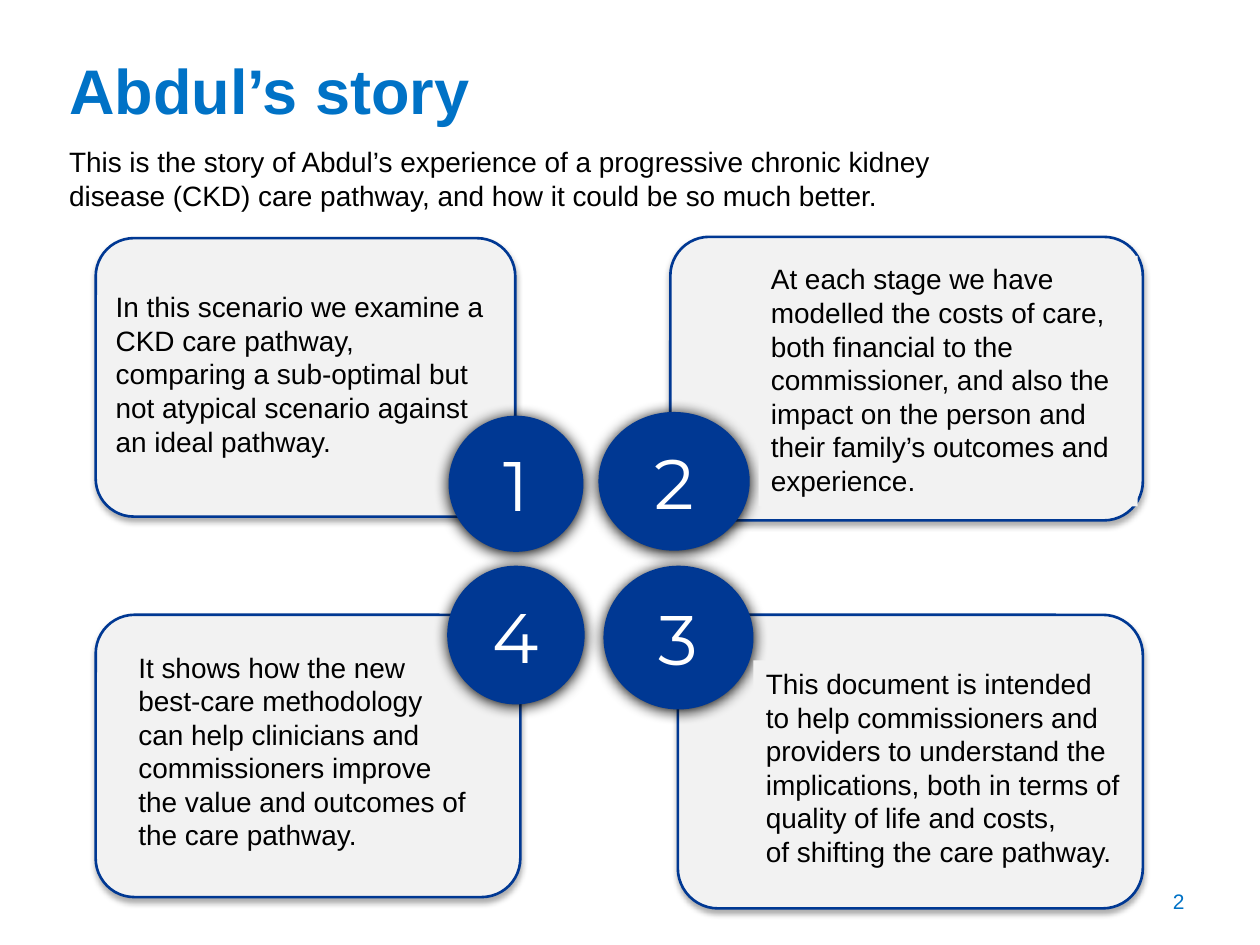
import pptx
import pptx.dml.color
import pptx.enum.shapes
import pptx.enum.text
import pptx.oxml
import pptx.oxml.ns
import pptx.util

RGB = pptx.dml.color.RGBColor
SHAPE = pptx.enum.shapes.MSO_SHAPE
ALIGN = pptx.enum.text.PP_ALIGN
ANCHOR = pptx.enum.text.MSO_ANCHOR
Inches, Pt = pptx.util.Inches, pptx.util.Pt

BLUE = RGB(0x00, 0x72, 0xC6)
NAVY = RGB(0x00, 0x38, 0x93)
PALE = RGB(0xF2, 0xF2, 0xF2)
BLACK = RGB(0, 0, 0)
WHITE = RGB(0xFF, 0xFF, 0xFF)

SLIDE_SIZE = (10, 7.5)
MARGIN = 0.45
CARD_LEFT, CARD_RIGHT = 0.76, 9.07
TOP_ROW, BOTTOM_ROW = 1.88, 4.88
CORNER = 0.137

TITLE = "Abdul’s story"
INTRO = ("This is the story of Abdul’s experience of a progressive chronic kidney "
         "disease (CKD) care pathway, and how it could be so much better.")
PAGE = "2"

BODY_FONT = {"name": "Arial", "size": Pt(16), "color": BLACK}
TITLE_FONT = {"name": "Arial", "size": Pt(36), "color": BLUE, "bold": True}
NUMBER_FONT = {"name": "Montserrat", "size": Pt(40), "color": WHITE}
PAGE_FONT = {"name": "Arial", "size": Pt(12), "color": BLUE}

# Shadows: blur, distance (points), opacity (percent)
CARD_SHADOW = (3.5, 2.2, 32)
BADGE_SHADOW = (8.5, 1, 100)

# A card hangs from the outer edge of its column; boxes are left, top, width, height
CARDS = [
    {"number": "1", "row": TOP_ROW + 0.01, "size": (3.33, 2.21), "side": "left",
     "badge": (3.57, 3.31, 1.05, 1.06), "story": (0.82, 2.25, 3.16, 1.45),
     "fill": PALE, "badge_on_top": True,
     "text": "In this scenario we examine a CKD care pathway, comparing a sub-optimal "
             "but not atypical scenario against an ideal pathway."},
    {"number": "4", "row": BOTTOM_ROW, "size": (3.37, 2.24), "side": "left",
     "badge": (3.56, 4.5, 1.07, 1.08), "story": (1, 5.11, 2.83, 1.72),
     "fill": None, "badge_on_top": False,
     "text": "It shows how the new best-care methodology can help clinicians and "
             "commissioners improve the value and outcomes of the care pathway."},
    {"number": "3", "row": BOTTOM_ROW, "size": (3.69, 2.33), "side": "right",
     "badge": (4.8, 4.5, 1.17, 1.12), "story": (5.98, 5.24, 3.01, 1.72),
     "fill": PALE, "badge_on_top": False,
     "text": "This document is intended to help commissioners and providers to "
             "understand the implications, both in terms of quality of life and "
             "costs, \nof shifting the care pathway."},
    {"number": "2", "row": TOP_ROW, "size": (3.75, 2.25), "side": "right",
     "badge": (4.76, 3.28, 1.18, 1.08), "story": (6.02, 2.03, 3.01, 1.99),
     "fill": PALE, "badge_on_top": False,
     "text": "At each stage we have modelled the costs of care, both financial to the "
             "commissioner, and also the impact on the person and their family’s "
             "outcomes and experience."},
]


def write(shape, text, font, align=ALIGN.LEFT, anchor=ANCHOR.TOP):
    frame = shape.text_frame
    frame.word_wrap = True
    frame.vertical_anchor = anchor
    paragraph = frame.paragraphs[0]
    paragraph.text = text
    paragraph.alignment = align
    for run in paragraph.runs:
        for key, value in font.items():
            if key == "color":
                run.font.color.rgb = value
            else:
                setattr(run.font, key, value)


def add_textbox(shapes, box, text, font, **layout):
    textbox = shapes.add_textbox(*map(Inches, box))
    write(textbox, text, font, **layout)
    return textbox


def drop_shadow(shape, blur, distance, opacity):
    """Give the shape a black shadow that falls straight down."""
    shape._element.spPr.append(pptx.oxml.parse_xml(
        f'<a:effectLst {pptx.oxml.ns.nsdecls("a")}>'
        f'<a:outerShdw blurRad="{Pt(blur)}" dist="{Pt(distance)}" dir="5400000" '
        f'algn="t" rotWithShape="0"><a:srgbClr val="000000">'
        f'<a:alpha val="{opacity * 1000}"/></a:srgbClr></a:outerShdw></a:effectLst>'))


def add_outlined(shapes, preset, box, fill, shadow):
    shape = shapes.add_shape(preset, *map(Inches, box))
    shape.fill.solid()
    shape.fill.fore_color.rgb = fill
    shape.line.color.rgb = NAVY
    shape.line.width = Pt(1.5)
    drop_shadow(shape, *shadow)
    return shape


def add_badge(shapes, card):
    badge = add_outlined(shapes, SHAPE.OVAL, card["badge"], NAVY, BADGE_SHADOW)
    write(badge, card["number"], NUMBER_FONT, ALIGN.CENTER, ANCHOR.MIDDLE)


def add_story(shapes, card):
    story = add_textbox(shapes, card["story"], card["text"], BODY_FONT)
    story.text_frame.auto_size = pptx.enum.text.MSO_AUTO_SIZE.SHAPE_TO_FIT_TEXT
    if card["fill"] is not None:
        story.fill.solid()
        story.fill.fore_color.rgb = card["fill"]


def add_card(slide, card):
    shapes = slide.shapes.add_group_shape().shapes
    width, height = card["size"]
    left = CARD_LEFT if card["side"] == "left" else CARD_RIGHT - width
    panel = add_outlined(shapes, SHAPE.ROUNDED_RECTANGLE,
                         (left, card["row"], width, height), PALE, CARD_SHADOW)
    panel.adjustments[0] = CORNER
    layers = [add_badge, add_story]
    if card["badge_on_top"]:
        layers.reverse()
    for add_layer in layers:
        add_layer(shapes, card)


def main():
    deck = pptx.Presentation()
    deck.slide_width, deck.slide_height = map(Inches, SLIDE_SIZE)
    slide = deck.slides.add_slide(deck.slide_layouts[5])

    title = slide.shapes.title
    title.left, title.top, title.width, title.height = map(
        Inches, (MARGIN, 0.34, 8.05, 0.73))
    write(title, TITLE, TITLE_FONT, anchor=ANCHOR.MIDDLE)
    add_textbox(slide.shapes, (MARGIN, 1.1, 7.57, 1.11), INTRO, BODY_FONT)

    for card in CARDS:
        add_card(slide, card)

    add_textbox(slide.shapes, (7.17, 6.95, 2.33, 0.4), PAGE, PAGE_FONT,
                align=ALIGN.RIGHT, anchor=ANCHOR.MIDDLE)
    deck.save("out.pptx")


if __name__ == "__main__":
    main()
